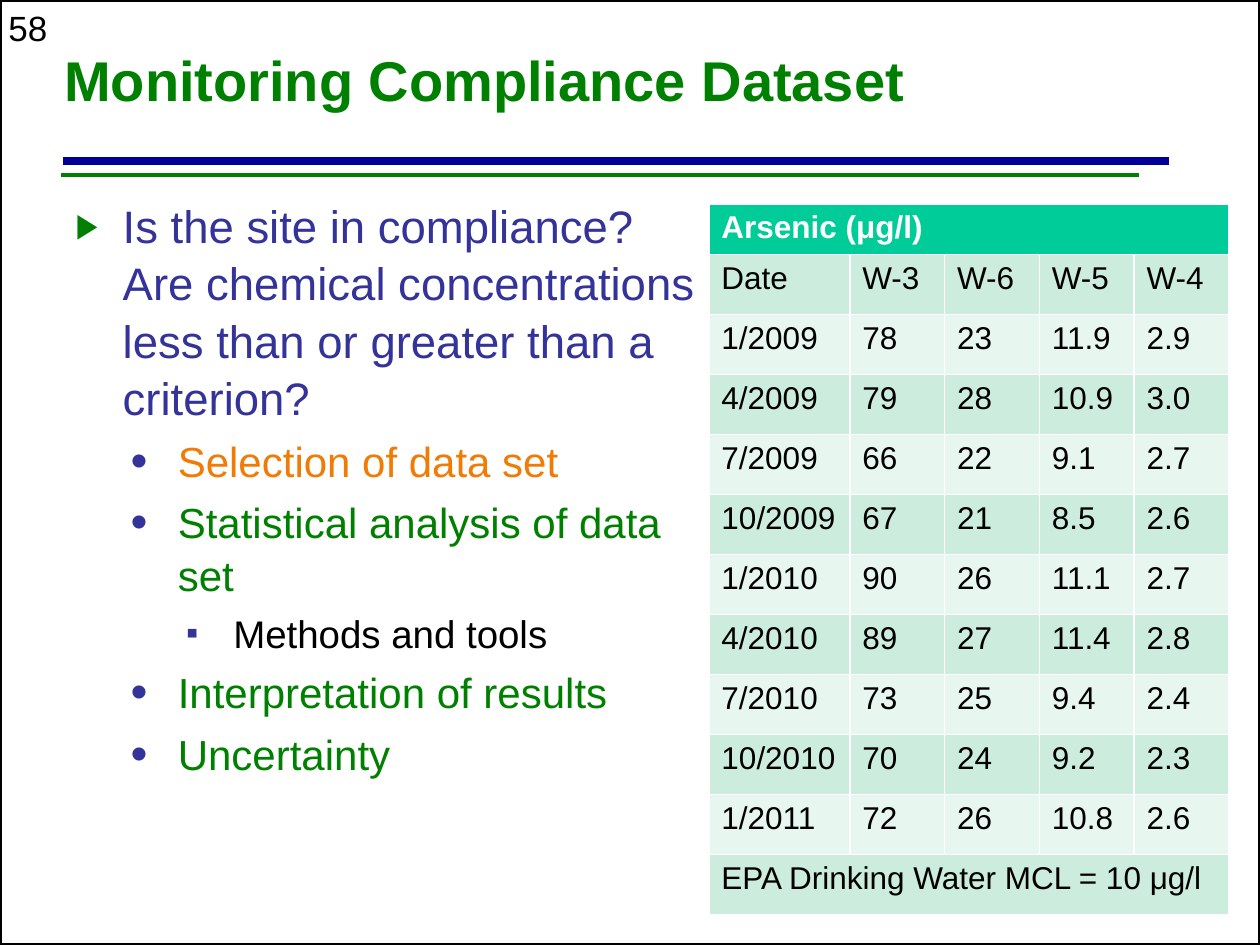
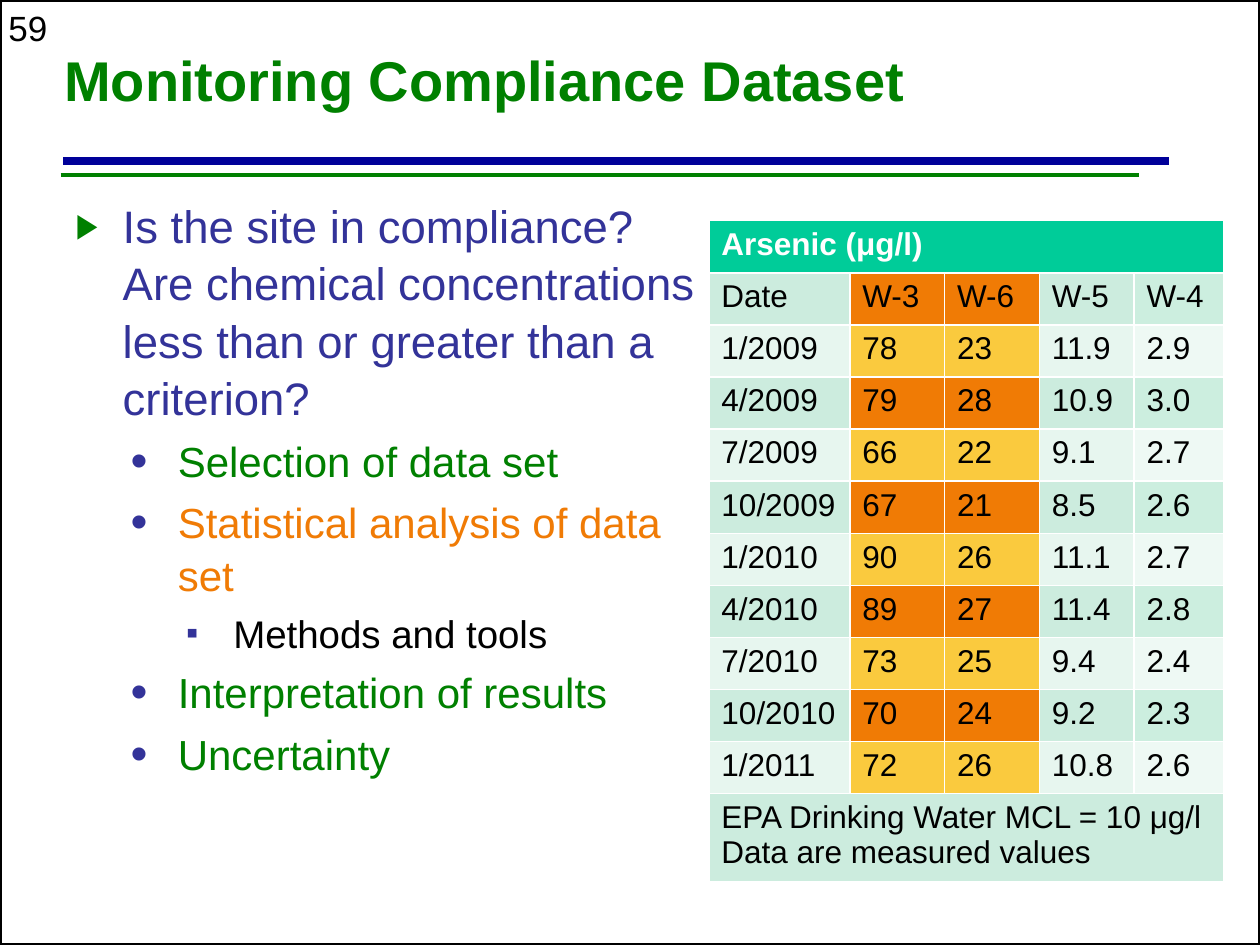
from lxml import etree
from pptx import Presentation, util as u
from pptx.dml.color import RGBColor
from pptx.enum import shapes, text
from pptx.oxml.ns import qn

COLORS = {
    "white": "FFFFFF", "black": "000000", "green": "008000", "navy": "000099",
    "indigo": "333399", "orange": "F07B05", "amber": "FACA3E", "teal": "00CC99",
    "mint": "CCECDE", "pale": "E7F6EF", "mint_edge": "CCEEDF", "pale_edge": "EEF9F4",
}

# Outline: level, wording
OUTLINE = [
    (0, "Is the site in compliance? Are chemical concentrations less than or greater than a criterion?"),
    (1, "Selection of data set"),
    (1, "Statistical analysis of data set"),
    (2, "Methods and tools"),
    (1, "Interpretation of results"),
    (1, "Uncertainty"),
]
# Level: size, text colour, left margin (cm), bullet, bullet colour, bullet size (%)
LEVELS = [
    (26, "indigo", 0.95, "▶", "green", 75),
    (24, "green", 2.06, "•", "indigo", 115),
    (22, "black", 3.18, "▪", "indigo", 90),
]
HANGING = 0.95

# Arsenic measurements per well
READINGS = [
    ("Date", "W-3", "W-6", "W-5", "W-4"),
    ("1/2009", "78", "23", "11.9", "2.9"),
    ("4/2009", "79", "28", "10.9", "3.0"),
    ("7/2009", "66", "22", "9.1", "2.7"),
    ("10/2009", "67", "21", "8.5", "2.6"),
    ("1/2010", "90", "26", "11.1", "2.7"),
    ("4/2010", "89", "27", "11.4", "2.8"),
    ("7/2010", "73", "25", "9.4", "2.4"),
    ("10/2010", "70", "24", "9.2", "2.3"),
    ("1/2011", "72", "26", "10.8", "2.6"),
]
CRITERION = "EPA Drinking Water MCL = 10 μg/l"
BANDS = [("mint", "pale")] * 5
WELL_BANDS = BANDS[:1] + [("orange", "amber")] * 2 + BANDS[:1] + [("mint_edge", "pale_edge")]

# What differs from slide to slide; heights are first, middle and last row
SLIDES = [
    dict(number="58", current="Selection of data set", top=4.11, last_column=1.91,
         heights=(1.02, 1.21, 1.21), bands=BANDS, footnote=CRITERION),
    dict(number="59", current="Statistical analysis of data set", top=4.45, last_column=1.8,
         heights=(1.05, 1.05, 1.75), bands=WELL_BANDS,
         footnote=CRITERION + "\nData are measured values"),
]
# Rules under the title: start, end, height, colour, width
RULES = [(1.27, 23.57, 3.25, "navy", 4.5), (1.22, 22.96, 3.53, "green", 2)]


def rgb(name):
    return RGBColor.from_string(COLORS[name])


def style(frame, size, color, bold=False):
    for paragraph in frame.paragraphs:
        for run in paragraph.runs:
            run.font.name = "Arial"
            run.font.size = u.Pt(size)
            run.font.bold = bold
            run.font.color.rgb = rgb(color)


prs = Presentation()
prs.slide_width, prs.slide_height = u.Cm(25.4), u.Cm(19.05)

for page in SLIDES:
    slide = prs.slides.add_slide(prs.slide_layouts[1])

    # Rules under the title
    for start, end, height, color, width in RULES:
        rule = slide.shapes.add_connector(
            shapes.MSO_CONNECTOR.STRAIGHT, u.Cm(start), u.Cm(height), u.Cm(end), u.Cm(height))
        rule.line.color.rgb = rgb(color)
        rule.line.width = u.Pt(width)
        etree.SubElement(rule._element.spPr, qn("a:effectLst"))

    # Page number
    number = slide.shapes.add_textbox(u.Cm(-0.08), 0, u.Cm(1.37), u.Cm(1.09))
    number.text_frame.text = page["number"]
    style(number.text_frame, 20, "black")

    # Page frame
    border = slide.shapes.add_shape(
        shapes.MSO_SHAPE.RECTANGLE, 0, 0, prs.slide_width, prs.slide_height)
    border.shadow.inherit = False
    border.fill.background()
    border.line.color.rgb = rgb("black")
    border.line.width = u.Pt(2)

    # Title
    title = slide.shapes.title
    title.left, title.top, title.width, title.height = u.Cm(1.04), u.Cm(0.25), u.Cm(21.08), u.Cm(2.92)
    title.text_frame.text = "Monitoring Compliance Dataset"
    title.text_frame.auto_size = text.MSO_AUTO_SIZE.NONE
    title.text_frame.vertical_anchor = text.MSO_ANCHOR.MIDDLE
    heading = title.text_frame.paragraphs[0]
    heading.alignment = text.PP_ALIGN.LEFT
    heading.line_spacing = 0.85
    style(title.text_frame, 32, "green", bold=True)

    # Outline with the current step highlighted
    outline = slide.placeholders[1]
    outline.left, outline.top, outline.width, outline.height = u.Cm(1.27), u.Cm(3.81), u.Cm(13), u.Cm(12.7)
    outline.text_frame.text = "\n".join(wording for _, wording in OUTLINE)
    outline.text_frame.auto_size = text.MSO_AUTO_SIZE.NONE
    for index, (level, wording) in enumerate(OUTLINE):
        size, color, margin, bullet, bullet_color, bullet_size = LEVELS[level]
        item = outline.text_frame.paragraphs[index]
        item.level = level
        item.line_spacing = 1.05
        item.space_before = u.Pt(size * 0.2 if index else 0)
        props = item._p.get_or_add_pPr()
        props.set("marL", str(u.Cm(margin)))
        props.set("indent", str(-u.Cm(HANGING)))
        tint = etree.SubElement(props, qn("a:buClr"))
        etree.SubElement(tint, qn("a:srgbClr"), val=COLORS[bullet_color])
        etree.SubElement(props, qn("a:buSzPct"), val=str(bullet_size * 1000))
        etree.SubElement(props, qn("a:buFont"), typeface="Arial")
        etree.SubElement(props, qn("a:buChar"), char=bullet)
        run = item.runs[0]
        run.font.name = "Arial"
        run.font.size = u.Pt(size)
        run.font.color.rgb = rgb("orange" if wording == page["current"] else color)

    # Arsenic table: heading row, readings, footnote row
    widths = [2.84, 1.91, 1.91, 1.91, page["last_column"]]
    first, middle, last = page["heights"]
    heights = [first] + [middle] * len(READINGS) + [last]
    arsenic = slide.shapes.add_table(
        len(heights), len(widths), u.Cm(14.29), u.Cm(page["top"]),
        u.Cm(sum(widths)), u.Cm(sum(heights))).table
    for column, width in zip(arsenic.columns, widths):
        column.width = u.Cm(width)
    for row, height in zip(arsenic.rows, heights):
        row.height = u.Cm(height)

    for row, wording, fill, color in [(0, "Arsenic (μg/l)", "teal", "white"),
                                      (len(heights) - 1, page["footnote"], "mint", "black")]:
        banner = arsenic.cell(row, 0)
        banner.merge(arsenic.cell(row, len(widths) - 1))
        banner.text_frame.text = wording
        banner.fill.solid()
        banner.fill.fore_color.rgb = rgb(fill)
        style(banner.text_frame, 18, color, bold=row == 0)

    for row, readings in enumerate(READINGS):
        for column, reading in enumerate(readings):
            cell = arsenic.cell(row + 1, column)
            cell.text_frame.text = reading
            cell.fill.solid()
            cell.fill.fore_color.rgb = rgb(page["bands"][column][row % 2])
            style(cell.text_frame, 18, "black")

prs.save("out.pptx")
